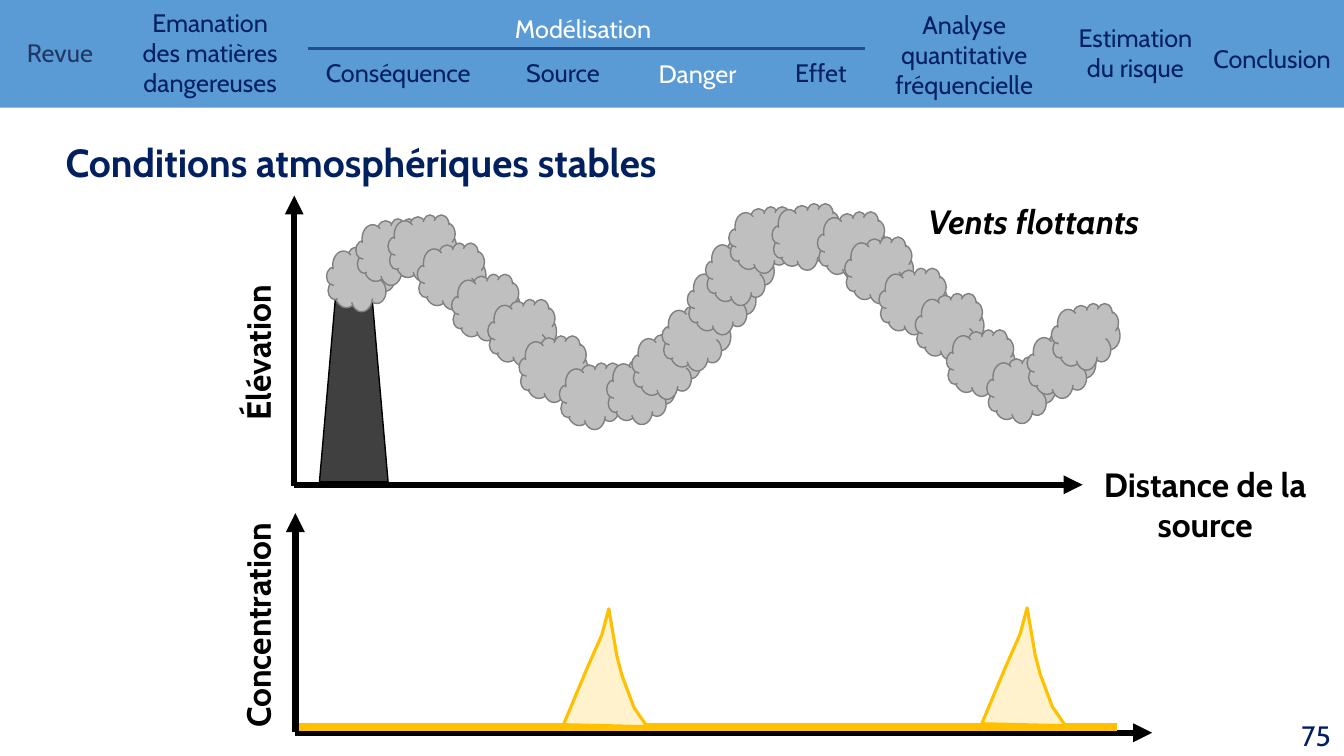
from dataclasses import dataclass

from lxml import etree
from pptx import Presentation
from pptx import util as u
from pptx.dml.color import RGBColor
from pptx.enum import shapes, text
from pptx.oxml import ns

FONT = "Cabin"
COLOURS = {
    "bar": "5B9BD5", "rule": "224D8C", "navy": "002060", "faded": "203864",
    "white": "FFFFFF", "black": "000000", "chimney": "404040",
    "smoke": "BFBFBF", "smoke_edge": "808080", "gold": "FFC000", "pale_gold": "FFF2CC",
}
CENTRE, LEFT, RIGHT = text.PP_ALIGN.CENTER, text.PP_ALIGN.LEFT, text.PP_ALIGN.RIGHT


@dataclass
class Label:
    words: str
    left: float
    top: float
    width: float
    height: float
    size: float = 18
    colour: str = "navy"
    bold: bool = False
    italic: bool = False
    align: text.PP_ALIGN = CENTRE
    rotation: float = 0


@dataclass
class Line:
    start: tuple[float, float]
    end: tuple[float, float]
    colour: str = "black"
    width: float = 4.5
    arrow: bool = True


# Navigation bar
NAVIGATION = [
    Label("Revue", 12.2, 23, 80, 29, colour="faded", align=LEFT),
    Label("Emanation des matières dangereuses", 91.4, 1.4, 117.4, 72),
    Label("Modélisation", 220.3, 5.8, 392.4, 29, colour="white"),
    Label("Conséquence", 220.3, 37.4, 128.2, 29),
    Label("Source", 330.5, 37.4, 143.3, 29),
    Label("Danger", 439.2, 38.2, 118, 27.4, colour="white"),
    Label("Effet", 523.4, 37.4, 126, 28),
    Label("Analyse quantitative fréquencielle", 625.7, 2.9, 126, 69),
    Label("Estimation\ndu risque", 748, 12.2, 126, 49.7),
    Label("Conclusion", 852.5, 27.4, 112.3, 31),
]
NAVIGATION_RULE = Line((220.3, 34.6), (617.8, 34.6), "rule", 2.25, arrow=False)

# Diagram labels and lines
DIAGRAM_LABELS = [
    Label("Distance de la source", 773.3, 327.6, 175, 65.5, 24, "black", True),
    Label("Vents flottants", 650.9, 139.7, 175, 65.5, 24, "black", True, True),
    Label("Élévation", 96.5, 234, 175, 36, 24, "black", True, rotation=270),
    Label("Concentration", 105.1, 414, 187.2, 65.5, 24, "black", True, rotation=270),
    Label("75", 733.7, 509.8, 223.9, 28.8, 20, align=RIGHT),
]
DIAGRAM_LINES = [
    Line((210.2, 347), (210.2, 139.7)),
    Line((210.2, 346.3), (773.3, 346.3)),
    Line((211, 522.7), (211, 366.5)),
    Line((211, 523.4), (823, 523.4)),
    Line((797.8, 519.1), (213.8, 519.1), "gold", 6, arrow=False),
]

# Smoke plume: the descent returns one wavelength further on
PUFF_WIDTH, PUFF_HEIGHT = 49, 47.5
WAVELENGTH, WAVE_LIFT = 305.3, -4.3
RISE = [(233.3, 175), (254.2, 156.2), (277.2, 153.4)]
DESCENT = [(298.1, 173.5), (322.6, 195.8), (348.5, 213.8), (370.8, 239.8), (399.6, 259.2)]
CLIMB = [(433.4, 255.6), (451.4, 237.6), (473, 217.4), (491, 191.5),
         (504, 170.6), (520.6, 147.6), (551.5, 145.4), (583.9, 151.2)]
LAST_RISE = [(733.7, 236.9), (751, 216.7)]
PLUME = (RISE + DESCENT + CLIMB
         + [(x + WAVELENGTH, y + WAVE_LIFT) for x, y in DESCENT] + LAST_RISE)

# Concentration peak, relative to its left end
PEAK = [(0, 0), (16.6, -39.6), (27.4, -64.1), (32.4, -82.8),
        (38.2, -49), (41.8, -35.3), (50.4, -12.2), (59.8, 1.4)]
PEAK_STARTS = [(402.5, 517.7), (701.3, 517)]


def rgb(name: str) -> RGBColor:
    return RGBColor.from_string(COLOURS[name])


def write(frame, words: str, *, size: float, colour: str, bold: bool = False,
          italic: bool = False, align: text.PP_ALIGN = CENTRE,
          anchor: text.MSO_ANCHOR = text.MSO_ANCHOR.TOP) -> None:
    frame.text = words
    frame.word_wrap = True
    frame.auto_size = text.MSO_AUTO_SIZE.NONE
    frame.vertical_anchor = anchor
    for paragraph in frame.paragraphs:
        paragraph.alignment = align
        for run in paragraph.runs:
            font = run.font
            font.name, font.size = FONT, u.Pt(size)
            font.bold, font.italic = bold, italic
            font.color.rgb = rgb(colour)


def add_label(slide, label: Label) -> None:
    box = slide.shapes.add_textbox(
        u.Pt(label.left), u.Pt(label.top), u.Pt(label.width), u.Pt(label.height))
    box.rotation = label.rotation
    write(box.text_frame, label.words, size=label.size, colour=label.colour,
          bold=label.bold, italic=label.italic, align=label.align)


def add_line(slide, line: Line) -> None:
    connector = slide.shapes.add_connector(
        shapes.MSO_CONNECTOR.STRAIGHT, *(u.Pt(value) for value in line.start + line.end))
    connector.line.color.rgb = rgb(line.colour)
    connector.line.width = u.Pt(line.width)
    if line.arrow:
        outline = connector.line._get_or_add_ln()
        etree.SubElement(outline, ns.qn("a:tailEnd"), type="triangle")
    etree.SubElement(connector._element.spPr, ns.qn("a:effectLst"))


def paint(shape, fill: str, edge: str | None = None, width: float = 1) -> None:
    shape.shadow.inherit = False
    shape.fill.solid()
    shape.fill.fore_color.rgb = rgb(fill)
    if edge is None:
        shape.line.fill.background()
    else:
        shape.line.color.rgb = rgb(edge)
        shape.line.width = u.Pt(width)


def add_preset(slide, kind: shapes.MSO_SHAPE, left: float, top: float, width: float,
               height: float, fill: str, edge: str | None = None) -> None:
    shape = slide.shapes.add_shape(kind, u.Pt(left), u.Pt(top), u.Pt(width), u.Pt(height))
    paint(shape, fill, edge)


def add_peak(slide, left: float, base: float) -> None:
    points = [(u.Pt(left + x), u.Pt(base + y)) for x, y in PEAK]
    builder = slide.shapes.build_freeform(*points[0])
    builder.add_line_segments(points[1:], close=True)
    paint(builder.convert_to_shape(), "pale_gold", "gold", 2.25)


def main() -> None:
    presentation = Presentation()
    presentation.slide_width, presentation.slide_height = u.Pt(960), u.Pt(540)
    slide = presentation.slides.add_slide(presentation.slide_layouts[5])

    # Title
    title = slide.shapes.title
    title.left, title.top = u.Pt(39.6), u.Pt(95)
    title.width, title.height = u.Pt(918), u.Pt(44)
    write(title.text_frame, "Conditions atmosphériques stables",
          size=28, colour="navy", bold=True, align=LEFT)

    # Navigation
    add_preset(slide, shapes.MSO_SHAPE.RECTANGLE, 0, 0, 960, 77, "bar")
    add_line(slide, NAVIGATION_RULE)

    # Axes, chimney and smoke
    for line in DIAGRAM_LINES:
        add_line(slide, line)
    add_preset(slide, shapes.MSO_SHAPE.TRAPEZOID, 228.2, 203, 49, 141.1, "chimney", "black")
    for left, top in PLUME:
        add_preset(slide, shapes.MSO_SHAPE.CLOUD, left, top, PUFF_WIDTH, PUFF_HEIGHT,
                   "smoke", "smoke_edge")

    # Concentration peaks
    for left, base in PEAK_STARTS:
        add_peak(slide, left, base)

    # Text
    for label in NAVIGATION + DIAGRAM_LABELS:
        add_label(slide, label)

    presentation.save("out.pptx")


if __name__ == "__main__":
    main()
